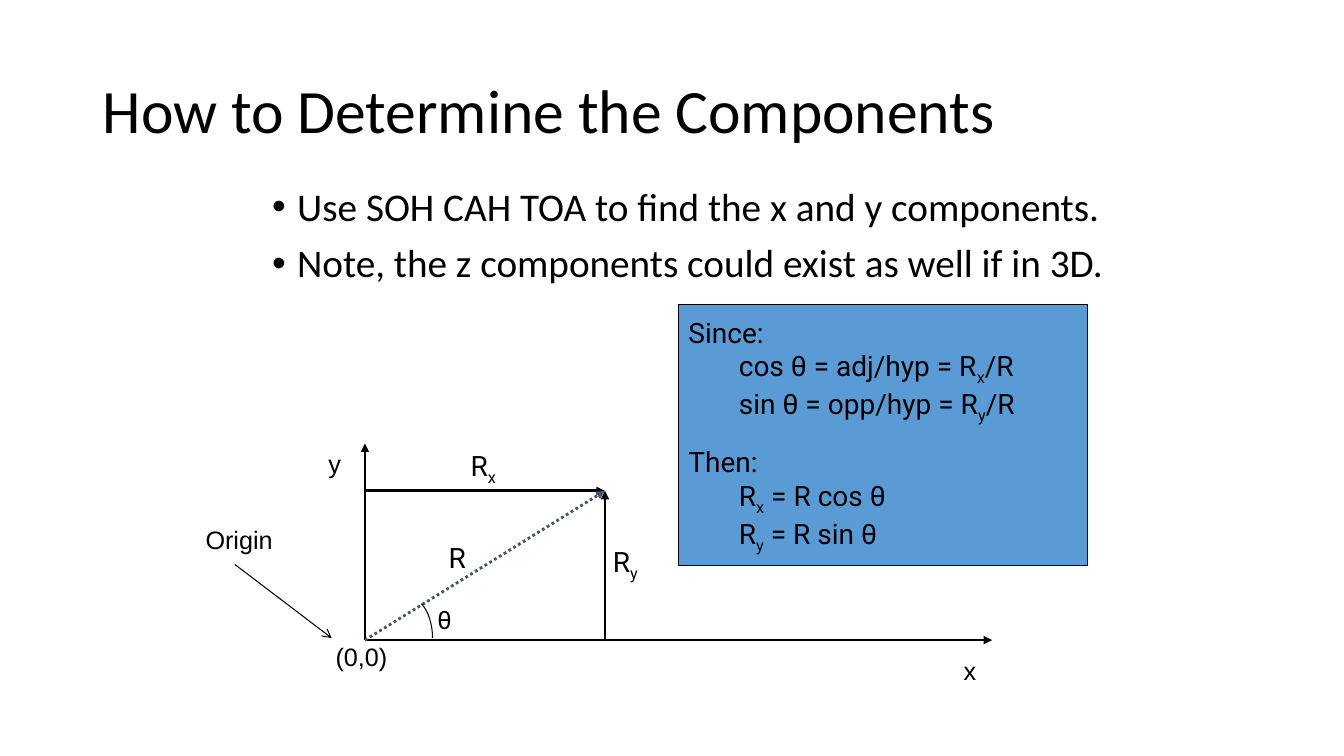
from lxml.etree import SubElement
from pptx import Presentation
from pptx.dml.color import RGBColor
from pptx.enum.dml import MSO_LINE
from pptx.enum.shapes import MSO_CONNECTOR, MSO_SHAPE
from pptx.enum.text import MSO_ANCHOR, MSO_AUTO_SIZE, PP_ALIGN
from pptx.oxml.ns import qn
from pptx.util import Inches, Pt

# Content: "_" marks the next letter as a subscript
TITLE = "How to Determine the Components"
BULLETS = [
    "Use SOH CAH TOA to find the x and y components.",
    "Note, the z components could exist as well if in 3D.",
]
# (text, indent in inches, space before in points)
FORMULAS = [
    ("Since:", 0, 0),
    ("cos θ = adj/hyp = R_x/R", 0.5, 0),
    ("sin θ = opp/hyp = R_y/R", 0.5, 0),
    ("Then:", 0, 14),
    ("R_x = R cos θ", 0.5, 0),
    ("R_y = R sin θ", 0.5, 0),
]
COLORS = {"ink": "000000", "panel": "5B9BD5", "vector": "44546A"}

# Diagram: origin O and vector tip T, in inches
OX, OY = 3.62, 6.35
TX, TY = 6, 4.87
# (start, end, colour, width, head, dash)
LINES = [
    ((OX, OY), (9.84, OY), "ink", 2, "triangle", None),
    ((OX, OY), (OX, 4.4), "ink", 2, "triangle", None),
    ((TX, OY), (TX, TY), "ink", 2, "triangle", None),
    ((OX, TY), (TX, TY), "ink", 2, "triangle", None),
    ((OX, OY), (TX, TY), "vector", 2, "triangle", MSO_LINE.ROUND_DOT),
    ((2.33, 5.6), (3.29, 6.33), "ink", 0.75, "arrow", None),
]
# (text, left, top, width, height, size, font)
LABELS = [
    ("x", 9.46, 6.45, 0.33, 0.4, 18, "Arial"),
    ("y", 3.16, 4.4, 0.33, 0.4, 18, "Arial"),
    ("(0,0)", 3.23, 6.31, 0.72, 0.4, 18, "Arial"),
    ("Origin", 1.94, 5.15, 0.88, 0.4, 18, "Arial"),
    ("θ", 4.24, 5.95, 0.33, 0.4, 18, "Roboto"),
    ("R", 4.35, 5.31, 0.38, 0.44, 20, "Roboto"),
    ("R_x", 4.57, 4.4, 0.47, 0.44, 20, "Roboto"),
    ("R_y", 5.98, 5.35, 0.46, 0.43, 20, "Roboto"),
]
# Control points of the angle mark
ARC = [(4.18, 5.99), (4.24, 6.05), (4.29, 6.18), (4.29, 6.33)]
STEPS = 16

deck = Presentation()
deck.slide_width, deck.slide_height = Inches(13.33), Inches(7.5)
slide = deck.slides.add_slide(deck.slide_layouts[6])
shapes = slide.shapes


def color(name):
    return RGBColor.from_string(COLORS[name])


def write(para, text, size, font):
    para.alignment = PP_ALIGN.LEFT
    para.font.size, para.font.name = Pt(size), font
    para.font.color.rgb = color("ink")
    first, *rest = text.split("_")
    para.add_run().text = first
    for part in rest:
        sub = para.add_run()
        sub.text = part[0]
        sub.font._element.set("baseline", "-25000")
        if part[1:]:
            para.add_run().text = part[1:]


def indent(para, left, first=0):
    props = para._p.get_or_add_pPr()
    props.set("marL", str(Inches(left)))
    props.set("indent", str(Inches(first)))
    return props


def add_text(box, wrap=True):
    frame = shapes.add_textbox(*map(Inches, box)).text_frame
    frame.word_wrap = wrap
    return frame


def next_para(frame, index):
    return frame.add_paragraph() if index else frame.paragraphs[0]


# Title
frame = add_text((0.92, 0.4, 11.5, 1.45))
frame.vertical_anchor = MSO_ANCHOR.MIDDLE
write(frame.paragraphs[0], TITLE, 44, "Calibri")
frame.paragraphs[0].line_spacing = 0.9

# Bullets
frame = add_text((2.6, 1.81, 8.5, 1.17))
for i, text in enumerate(BULLETS):
    para = next_para(frame, i)
    write(para, text, 28, "Calibri")
    para.line_spacing, para.space_before = 0.9, Pt(10)
    props = indent(para, 0.25, -0.25)
    SubElement(props, qn("a:buFont")).set("typeface", "Arial")
    SubElement(props, qn("a:buChar")).set("char", "•")

# Axes, components, vector and pointer
for start, end, ink, width, head, dash in LINES:
    line = shapes.add_connector(MSO_CONNECTOR.STRAIGHT, *map(Inches, start + end))
    line.line.color.rgb, line.line.width = color(ink), Pt(width)
    if dash:
        line.line.dash_style = dash
    SubElement(line.line._get_or_add_ln(), qn("a:tailEnd")).set("type", head)
    SubElement(line._element.spPr, qn("a:effectLst"))


# Angle mark
def bezier(t):
    weights = ((1 - t) ** 3, 3 * t * (1 - t) ** 2, 3 * t * t * (1 - t), t**3)
    return tuple(Inches(sum(w * p[k] for w, p in zip(weights, ARC))) for k in (0, 1))


pen = shapes.build_freeform(*bezier(0))
pen.add_line_segments([bezier(i / STEPS) for i in range(1, STEPS + 1)], close=False)
arc = pen.convert_to_shape()
arc.shadow.inherit = False
arc.fill.background()
arc.line.color.rgb, arc.line.width = color("ink"), Pt(0.75)

# Labels
for text, *box, size, font in LABELS:
    frame = add_text(box, wrap=False)
    frame.auto_size = MSO_AUTO_SIZE.SHAPE_TO_FIT_TEXT
    write(frame.paragraphs[0], text, size, font)

# Formula panel
panel = shapes.add_shape(MSO_SHAPE.RECTANGLE, *map(Inches, (6.73, 3.02, 4.06, 2.59)))
panel.shadow.inherit = False
panel.fill.solid()
panel.fill.fore_color.rgb = color("panel")
panel.line.color.rgb, panel.line.width = color("ink"), Pt(0.75)
frame = panel.text_frame
frame.word_wrap, frame.vertical_anchor = True, MSO_ANCHOR.MIDDLE
for i, (text, left, gap) in enumerate(FORMULAS):
    para = next_para(frame, i)
    write(para, text, 20, "Roboto")
    para.space_before = Pt(gap)
    indent(para, left)

deck.save("out.pptx")
